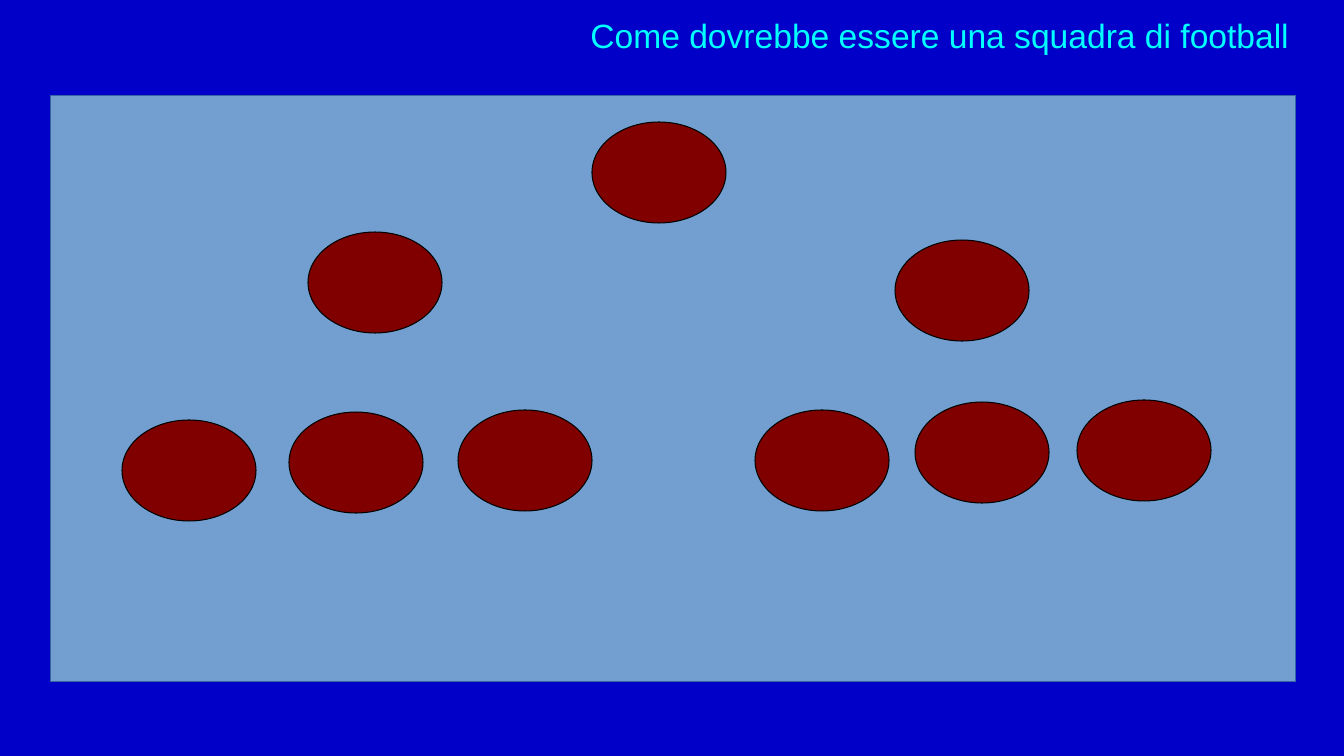
from pptx import Presentation
from pptx.dml.color import RGBColor
from pptx.enum.shapes import MSO_SHAPE
from pptx.enum.text import MSO_ANCHOR, MSO_AUTO_SIZE, PP_ALIGN
from pptx.util import Emu, Pt

RECTANGLE, OVAL = MSO_SHAPE.RECTANGLE, MSO_SHAPE.OVAL
MIDDLE, RIGHT, NO_AUTOFIT = MSO_ANCHOR.MIDDLE, PP_ALIGN.RIGHT, MSO_AUTO_SIZE.NONE

BACKGROUND = RGBColor(0x00, 0x00, 0xC8)
TITLE_CYAN = RGBColor(0x00, 0xFF, 0xFF)
FIELD_FILL = RGBColor(0x72, 0x9F, 0xCF)
FIELD_LINE = RGBColor(0x34, 0x65, 0xA4)
PLAYER_FILL = RGBColor(0x80, 0x00, 0x00)
PLAYER_LINE = RGBColor(0x00, 0x00, 0x00)

PX_PER_INCH = 100.8
SLIDE_SIZE = (1344, 756)
TITLE_BOX = (178, 0, 1121, 71)
FIELD_BOX = (51, 96, 1245, 586)
PLAYER_SIZE = (134, 101)
# Top left corner of each player, measured from the field's corner
FORMATION = (
    (541, 26),
    (257, 136), (844, 144),
    (71, 324), (238, 316), (407, 314),
    (704, 314), (864, 306), (1026, 304),
)


def px(length):
    return Emu(round(length * 914400 / PX_PER_INCH))


def add_outlined(slide, kind, box, fill, line):
    shape = slide.shapes.add_shape(kind, *map(px, box))
    shape.shadow.inherit = False
    shape.fill.solid()
    shape.fill.fore_color.rgb = fill
    shape.line.color.rgb = line
    shape.line.width = Pt(0.75)


def set_title(slide, box, wording):
    title = slide.shapes.title
    title.left, title.top, title.width, title.height = map(px, box)
    frame = title.text_frame
    frame.text = wording
    frame.word_wrap = True
    frame.auto_size = NO_AUTOFIT
    frame.vertical_anchor = MIDDLE
    paragraph = frame.paragraphs[0]
    paragraph.alignment = RIGHT
    font = paragraph.runs[0].font
    font.name = "Arial"
    font.size = Pt(24)
    font.color.rgb = TITLE_CYAN


def add_field(slide, box):
    """Draw the playing field and the team lined up on it."""
    add_outlined(slide, RECTANGLE, box, FIELD_FILL, FIELD_LINE)
    left, top = box[:2]
    for across, down in FORMATION:
        player_box = (left + across, top + down, *PLAYER_SIZE)
        add_outlined(slide, OVAL, player_box, PLAYER_FILL, PLAYER_LINE)


def main():
    deck = Presentation()
    deck.slide_width, deck.slide_height = map(px, SLIDE_SIZE)
    title_only = deck.slide_layouts[5]
    slide = deck.slides.add_slide(title_only)
    slide.background.fill.solid()
    slide.background.fill.fore_color.rgb = BACKGROUND
    set_title(slide, TITLE_BOX, "Come dovrebbe essere una squadra di football")
    add_field(slide, FIELD_BOX)
    deck.save("out.pptx")


if __name__ == "__main__":
    main()
